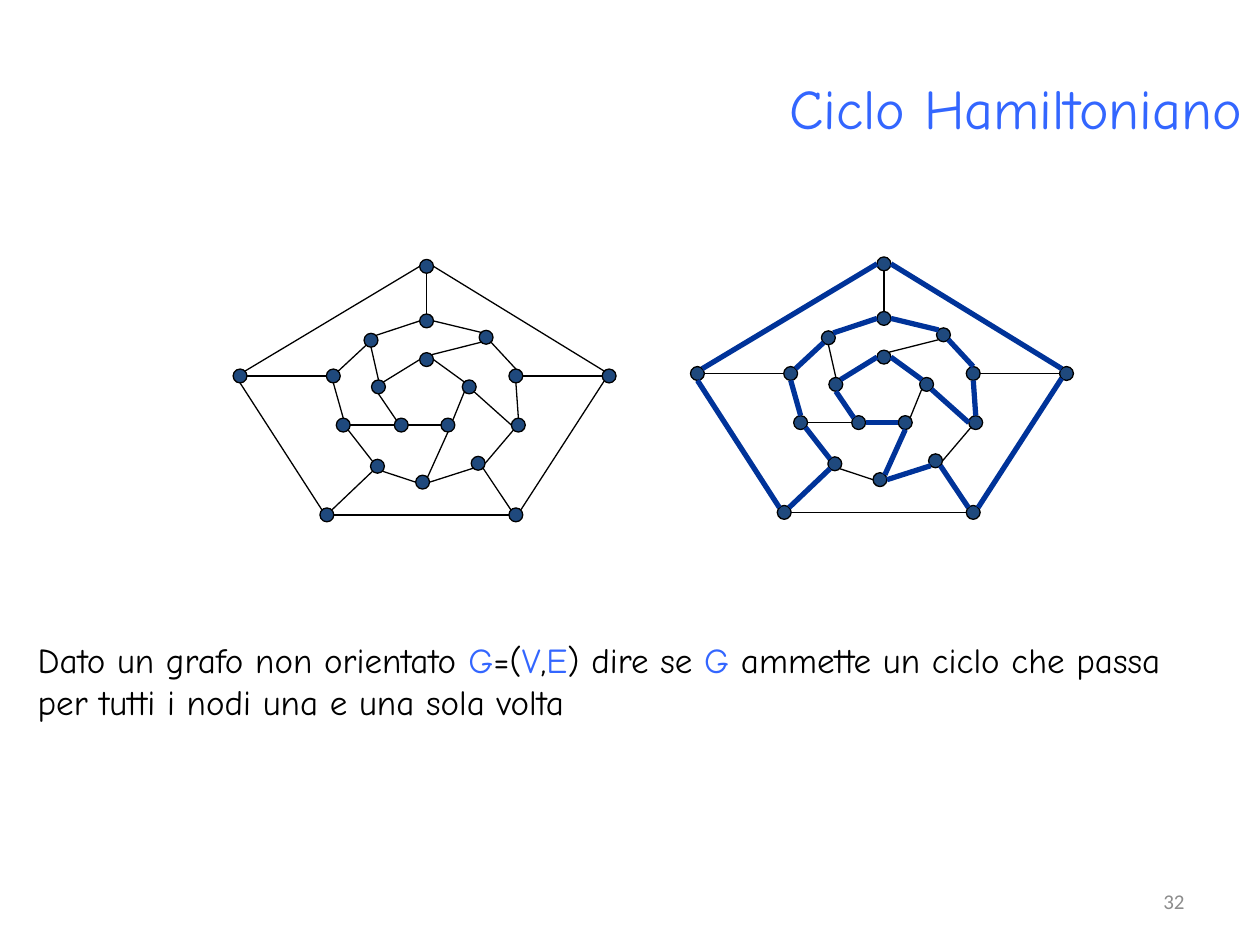
from math import hypot

from lxml.etree import SubElement
from pptx import Presentation
from pptx.dml.color import RGBColor as Rgb
from pptx.enum.shapes import MSO_CONNECTOR as Link, MSO_SHAPE as Kind
from pptx.enum.text import MSO_ANCHOR as Anchor, MSO_AUTO_SIZE as Fit, PP_ALIGN as Align
from pptx.oxml.ns import qn
from pptx.util import Cm, Pt

HUES = {"text": "000000", "blue": "3366FF", "node": "1F497D",
        "cycle": "003399", "grey": "8C8C8C"}
FACE = "Comic Neue"
TITLE = "Ciclo Hamiltoniano"
BODY = [
    [("Dato un grafo non orientato ", "text"), ("G", "blue"), ("=(", "text"),
     ("V", "blue"), (",", "text"), ("E", "blue"), (") dire se ", "text"),
     ("G", "blue"), (" ammette un ciclo che passa", "text")],
    [("per tutti i nodi una e una sola volta", "text")],
]
NUMBER = "32"

RINGS = {
    "outer": [(3.76, 0), (7.44, 2.21), (5.56, 5.01), (1.75, 5.01), (0, 2.21)],
    "mid": [(3.76, 1.1), (4.96, 1.43), (5.56, 2.21), (5.61, 3.2), (4.8, 3.97),
            (3.68, 4.35), (2.77, 4.03), (2.08, 3.2), (1.88, 2.21), (2.64, 1.49)],
    "inner": [(3.76, 1.88), (4.62, 2.43), (4.19, 3.2), (3.25, 3.2), (2.79, 2.43)],
}
NODES = {f"{ring}{i}": spot for ring, spots in RINGS.items()
         for i, spot in enumerate(spots, 1)}

CYCLE = [
    "inner1 e inner2 nw", "inner4 e inner3 w", "inner4 nw inner5 s",
    "inner5 ne inner1 w", "outer3 ne outer2 sw", "outer1 e outer2 nw",
    "outer4 nw outer5 s", "outer5 ne outer1 w", "mid3 n mid2 se",
    "mid1 e mid2 nw", "mid4 n mid3 s", "mid1 w mid10 ne", "mid10 sw mid9 ne",
    "mid9 s mid8 n", "mid8 se mid7 nw", "mid6 e mid5 sw", "outer3 nw mid5 se",
    "mid7 sw outer4 ne", "inner3 s mid6 ne", "mid4 w inner2 se",
]
REST = [
    "inner3 ne inner2 sw", "outer4 e outer3 w", "mid4 sw mid5 e",
    "mid7 se mid6 w", "mid9 w outer5 e", "mid1 n outer1 s", "mid3 e outer2 w",
    "inner4 w mid8 e", "inner5 n mid10 s", "mid2 sw inner1 ne",
]
GRAPHS = [(4.7, 5.23, []), (13.92, 5.18, CYCLE)]
SIZE = 0.28


def color(key):
    return Rgb.from_string(HUES[key])


def site(name, side, left, top):
    x, y = NODES[name]
    dx = ("e" in side) - ("w" in side)
    dy = ("s" in side) - ("n" in side)
    reach = SIZE / 2 / hypot(dx, dy)
    return (Cm(left + x + SIZE / 2 + dx * reach),
            Cm(top + y + SIZE / 2 + dy * reach))


def draw_edges(shapes, edges, left, top, hue, width):
    for edge in edges:
        start, out, end, into = edge.split()
        line = shapes.add_connector(Link.STRAIGHT, *site(start, out, left, top),
                                    *site(end, into, left, top))
        line.line.color.rgb = color(hue)
        line.line.width = Pt(width)
        SubElement(line._element.spPr, qn("a:effectLst"))


def draw_graph(shapes, left, top, path):
    draw_edges(shapes, CYCLE + REST, left, top, "text", 0.75)
    for x, y in NODES.values():
        dot = shapes.add_shape(Kind.OVAL, Cm(left + x), Cm(top + y), Cm(SIZE), Cm(SIZE))
        dot.shadow.inherit = False
        dot.fill.solid()
        dot.fill.fore_color.rgb = color("node")
        dot.line.color.rgb = color("text")
        dot.line.width = Pt(0.75)
    draw_edges(shapes, path, left, top, "cycle", 3)


def style(para, size, hue=None, face=FACE, align=None):
    para.font.name, para.font.size = face, Pt(size)
    para.alignment = align
    if hue:
        para.font.color.rgb = color(hue)


def main():
    """Build the slide on Hamiltonian cycles."""
    deck = Presentation()
    deck.slide_width, deck.slide_height = Cm(25.4), Cm(19.05)
    slide = deck.slides.add_slide(deck.slide_layouts[5])
    shapes = slide.shapes

    title = shapes.title
    title.left, title.top, title.width, title.height = Cm(3.71), Cm(0.56), Cm(21.59), Cm(3.18)
    frame = title.text_frame
    frame.text = TITLE
    frame.auto_size = Fit.NONE
    frame.vertical_anchor = Anchor.MIDDLE
    style(frame.paragraphs[0], 32, "blue", align=Align.RIGHT)

    frame = shapes.add_textbox(Cm(0.51), Cm(12.75), Cm(24.77), Cm(1.96)).text_frame
    frame.word_wrap = False
    for i, runs in enumerate(BODY):
        para = frame.add_paragraph() if i else frame.paragraphs[0]
        style(para, 20, align=Align.LEFT)
        for text, hue in runs:
            run = para.add_run()
            run.text = text
            run.font.color.rgb = color(hue)

    for left, top, path in GRAPHS:
        draw_graph(shapes, left, top, path)

    frame = shapes.add_textbox(Cm(18.21), Cm(17.65), Cm(5.92), Cm(1.02)).text_frame
    frame.word_wrap = True
    frame.vertical_anchor = Anchor.MIDDLE
    frame.text = NUMBER
    style(frame.paragraphs[0], 12, "grey", "Calibri", Align.RIGHT)

    deck.save("out.pptx")


if __name__ == "__main__":
    main()
